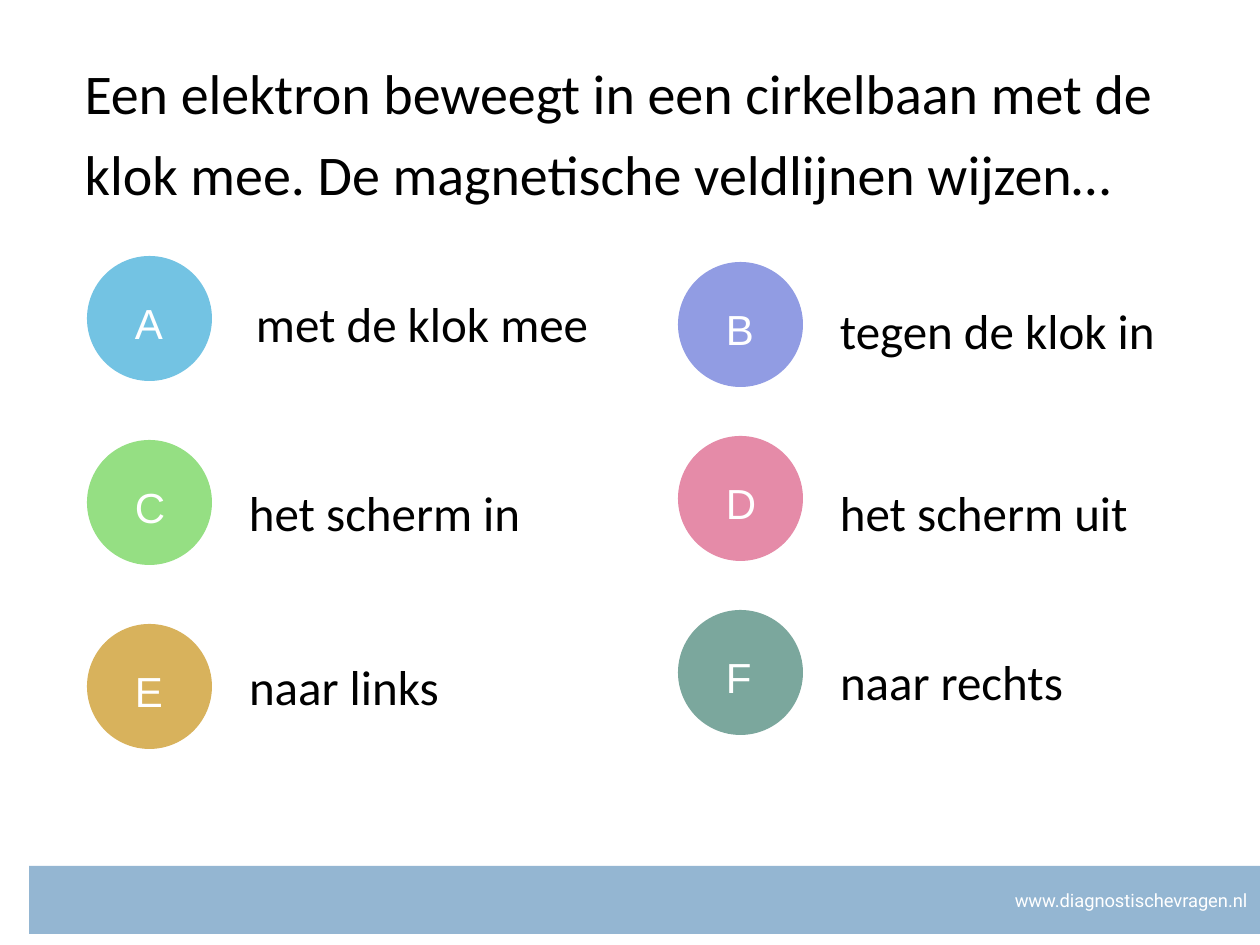
from pptx import Presentation, util as u
from pptx.dml.color import RGBColor
from pptx.enum import shapes, text

PX = 914400 / 126
COLORS = {
    "white": "FFFFFF", "black": "000000", "bar": "94B6D2",
    "A": "73C3E3", "B": "919CE3", "C": "95DF83",
    "D": "E58BA8", "E": "D8B25C", "F": "7BA79D",
}
COLUMNS = [(87, 256, 184), (678, 262, 174)]
CIRCLE = 125
LETTER_W = 49
LABEL_H = 81
ANSWERS = [
    ("A", "met de klok mee", 164, 21, 379),
    ("B", "tegen de klok in", 157, 22, 338),
    ("C", "het scherm in", 157, 26, 330),
    ("D", "het scherm uit", 157, 30, 338),
    ("E", "naar links", 157, 16, 223),
    ("F", "naar rechts", 157, 25, 244),
]


def rgb(name):
    return RGBColor.from_string(COLORS[name])


def px(*lengths):
    return [u.Emu(round(n * PX)) for n in lengths]


def add_filled(parent, kind, box, color):
    sp = parent.add_shape(kind, *px(*box))
    sp.shadow.inherit = False
    sp.fill.solid()
    sp.fill.fore_color.rgb = rgb(color)
    sp.line.fill.background()
    return sp


def write(sp, words, size, font, color, spacing=None, align=text.PP_ALIGN.LEFT,
          anchor=text.MSO_ANCHOR.TOP, insets=None, fit=text.MSO_AUTO_SIZE.SHAPE_TO_FIT_TEXT):
    tf = sp.text_frame
    tf.text = words
    tf.word_wrap = True
    tf.auto_size = fit
    tf.vertical_anchor = anchor
    if insets is not None:
        tf.margin_left, tf.margin_top, tf.margin_right, tf.margin_bottom = px(*[insets] * 4)
    p = tf.paragraphs[0]
    p.alignment = align
    if spacing:
        p.line_spacing = spacing
    r = p.runs[0]
    r.font.size = u.Pt(size)
    r.font.name = font
    r.font.color.rgb = rgb(color)


def write_answer(sp, words, size, font, color):
    write(sp, words, size, font, color, 1.2, anchor=text.MSO_ANCHOR.MIDDLE, insets=5)


def add_footer(s, x, y, w, h):
    add_filled(s.shapes, shapes.MSO_SHAPE.RECTANGLE, (x, y, w, h), "bar")
    link_w, link_h = 319, 35
    sp = s.shapes.add_textbox(*px(x + w - link_w, y + 17, link_w, link_h))
    write(sp, "www.diagnostischevragen.nl", 10.5, "Roboto", "white", align=text.PP_ALIGN.RIGHT)


def add_question(s, x, y, w, h):
    sp = s.shapes.title
    sp.left, sp.top, sp.width, sp.height = px(x, y, w, h)
    write(sp, "Een elektron beweegt in een cirkelbaan met de klok mee. "
          "De magnetische veldlijnen wijzen…", 32, "Calibri", "black", 1.21,
          fit=text.MSO_AUTO_SIZE.NONE)


def add_badge(s, x, y, letter, filled):
    group = s.shapes.add_group_shape().shapes
    add_filled(group, shapes.MSO_SHAPE.OVAL, (x, y, CIRCLE, CIRCLE), letter)
    h = 71 if filled else 59
    box = (x + (CIRCLE - LETTER_W) / 2 + 5, y + (CIRCLE - h) / 2 - 1, LETTER_W, h)
    if filled:
        sp = add_filled(group, shapes.MSO_SHAPE.RECTANGLE, box, letter)
    else:
        sp = group.add_textbox(*px(*box))
    write_answer(sp, letter, 24, "Arial", "white")


def add_answer(s, x, y, answer, filled):
    letter, label, dx, dy, w = answer
    add_badge(s, x, y, letter, filled)
    sp = s.shapes.add_textbox(*px(x + dx, y + dy, w, LABEL_H))
    write_answer(sp, label, 28, "Calibri", "black")


def main():
    prs = Presentation()
    prs.slide_width, prs.slide_height = px(1260, 945)
    s = prs.slides.add_slide(prs.slide_layouts[5])
    add_footer(s, 29, 866, 1231, 68)
    add_question(s, 72, 38, 1118, 199)
    for i, answer in enumerate(ANSWERS):
        row, col = divmod(i, 2)
        x, y, step = COLUMNS[col]
        add_answer(s, x, y + row * step, answer, filled=row == 2)
    prs.save("out.pptx")


if __name__ == "__main__":
    main()
